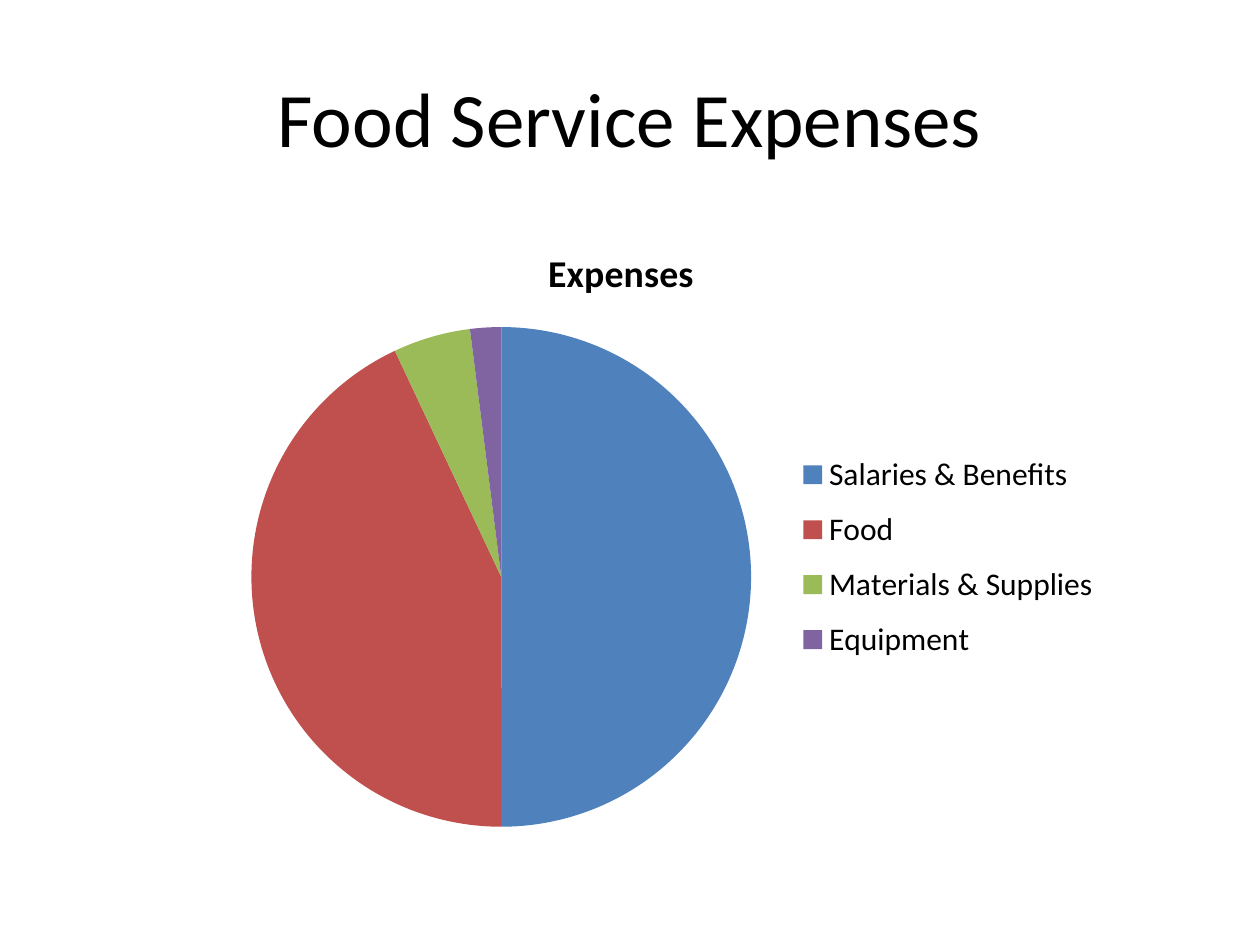
from dataclasses import dataclass

from lxml import etree
from pptx import Presentation
from pptx.chart.data import CategoryChartData
from pptx.dml.color import RGBColor
from pptx.enum.chart import XL_CHART_TYPE, XL_LEGEND_POSITION
from pptx.enum.text import MSO_ANCHOR, PP_ALIGN
from pptx.oxml.ns import qn
from pptx.util import Pt

PIE = XL_CHART_TYPE.PIE
LEGEND_RIGHT = XL_LEGEND_POSITION.RIGHT
MIDDLE = MSO_ANCHOR.MIDDLE
CENTER = PP_ALIGN.CENTER


@dataclass(frozen=True)
class Theme:
    font: str = "Calibri"
    text: str = "000000"
    slices: tuple = ("4F81BD", "C0504D", "9BBB59", "8064A2")
    title_size: float = 44
    chart_title_size: float = 21.6
    legend_size: float = 18


THEME = Theme()

EXPENSES = {
    "Salaries & Benefits": 50,
    "Food": 43,
    "Materials & Supplies": 5,
    "Equipment": 2,
}


def style_font(font, size, bold=False):
    font.name = THEME.font
    font.size = Pt(size)
    font.bold = bold
    font.color.rgb = RGBColor.from_string(THEME.text)


def write(tf, text, *, size, bold=False, align=CENTER):
    p = tf.paragraphs[0]
    p.alignment = align
    r = p.add_run()
    r.text = text
    style_font(r.font, size, bold)


def set_layout(element, after, **fractions):
    """Place a chart part by fractions (x, y, w, h) of the chart area."""
    for old in element.findall(qn("c:layout")):
        element.remove(old)
    layout = etree.Element(qn("c:layout"))
    manual = etree.SubElement(layout, qn("c:manualLayout"))
    for mode in ("xMode", "yMode"):
        etree.SubElement(manual, qn(f"c:{mode}"), val="edge")
    for key, value in fractions.items():
        etree.SubElement(manual, qn(f"c:{key}"), val=str(value))
    element.find(qn(after)).addnext(layout)


def add_title(s, text, left, top, width, height):
    sp = s.shapes.add_textbox(Pt(left), Pt(top), Pt(width), Pt(height))
    tf = sp.text_frame
    tf.word_wrap = True
    tf.vertical_anchor = MIDDLE
    write(tf, text, size=THEME.title_size)


def add_pie(s, name, values, left, top, width, height):
    data = CategoryChartData()
    data.categories = list(values)
    data.add_series(name, list(values.values()))
    chart = s.shapes.add_chart(
        PIE, Pt(left), Pt(top), Pt(width), Pt(height), data).chart
    style_font(chart.font, THEME.legend_size)

    chart.has_title = True
    title = chart.chart_title
    write(title.text_frame, name, size=THEME.chart_title_size, bold=True)
    title.include_in_layout = False
    set_layout(title._element, "c:tx", x=0.37, y=0.03)

    chart.has_legend = True
    legend = chart.legend
    legend.position = LEGEND_RIGHT
    legend.include_in_layout = False
    set_layout(legend._element, "c:legendPos", x=0.64, y=0.35, w=0.34, h=0.38)

    plot = chart.plots[0]
    plot.vary_by_categories = True
    for i, color in enumerate(THEME.slices):
        fill = plot.series[0].points[i].format.fill
        fill.solid()
        fill.fore_color.rgb = RGBColor.from_string(color)


def main():
    prs = Presentation()
    prs.slide_width, prs.slide_height = Pt(720), Pt(540)
    s = prs.slides.add_slide(prs.slide_layouts[6])
    add_title(s, "Food Service Expenses", 36, 21.6, 648, 90)
    add_pie(s, "Expenses", EXPENSES, 114, 126, 528, 356.4)
    prs.save("out.pptx")


if __name__ == "__main__":
    main()
